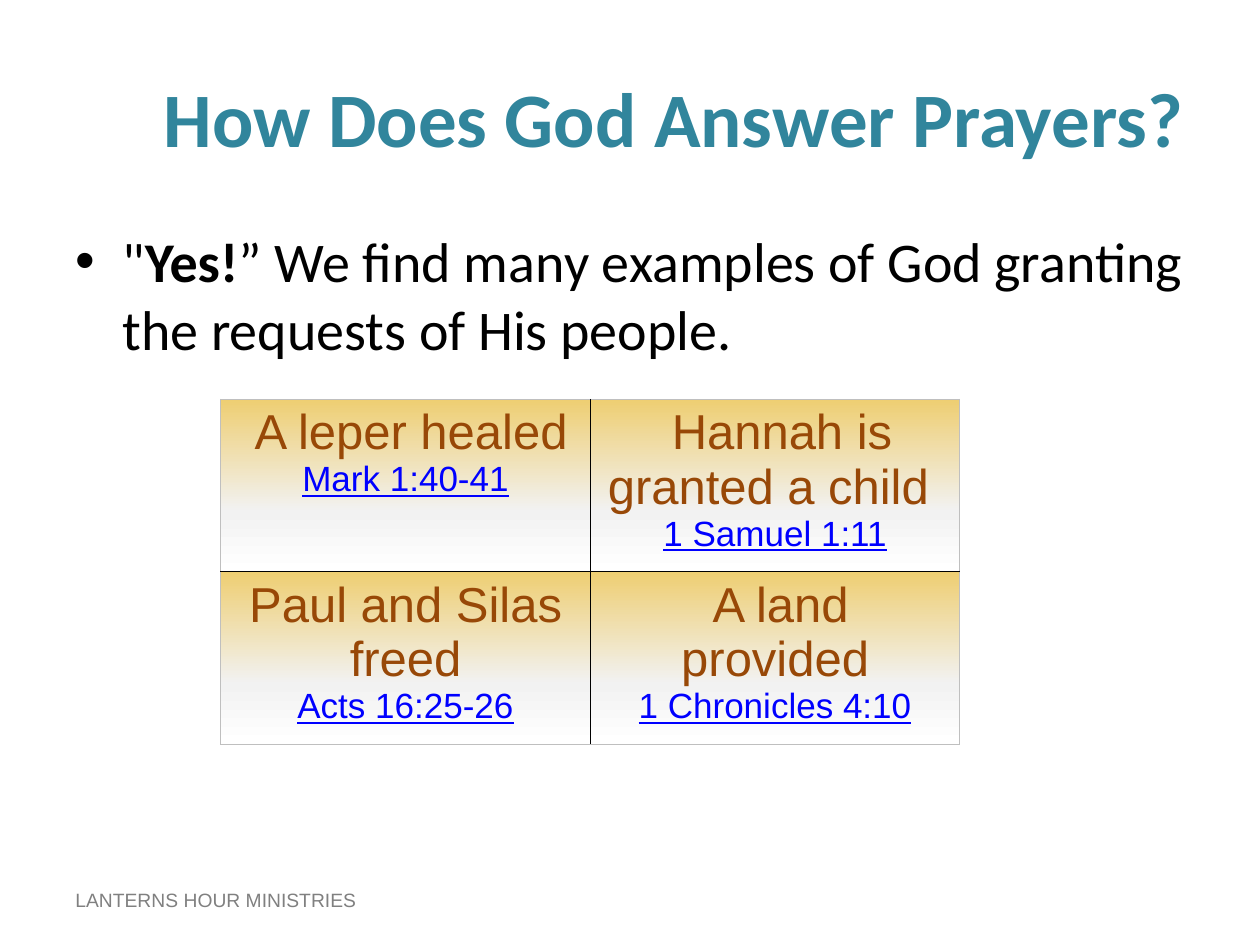
from lxml import etree
from pptx import Presentation, util as u
from pptx.dml.color import RGBColor
from pptx.enum import text
from pptx.oxml import ns

ALIGN = text.PP_ALIGN
LEFT, WIDE = 1.27, 22.86
STOPS = [(0, "EECE72"), (65, "F2F2F2"), (100, "FFFFFF")]
CELLS = [
    [(" A leper healed", "Mark 1:40-41"),
     (" Hannah is granted a child ", "1 Samuel 1:11")],
    [("Paul and Silas freed", "Acts 16:25-26"),
     (" A land provided", "1 Chronicles 4:10")],
]


def tint(code):
    return RGBColor.from_string(code)


def node(root, tag, **attrs):
    return etree.SubElement(root, ns.qn("a:" + tag), attrs)


def write(para, words, size=28, face="Arial", color="000000",
          bold=False, under=False, align=None):
    """Add one formatted run to a paragraph."""
    if align is not None:
        para.alignment = align
    run = para.add_run()
    run.text = words
    font = run.font
    font.size, font.name = u.Pt(size), face
    font.bold, font.underline = bold, under
    font.color.rgb = tint(color)


def edge(props, tag, color, width):
    line = node(props, tag, w=str(u.Pt(width)))
    node(node(line, "solidFill"), "srgbClr", val=color)


def blend(props, stops):
    """Fill a cell with a gradient that runs from top to bottom."""
    grad = node(props, "gradFill", rotWithShape="1")
    group = node(grad, "gsLst")
    for spot, color in stops:
        node(node(group, "gs", pos=str(spot * 1000)), "srgbClr", val=color)
    node(grad, "lin", ang="5400000", scaled="0")


class Deck:
    def __init__(self):
        self.file = Presentation()
        self.file.slide_width, self.file.slide_height = u.Cm(25.4), u.Cm(19.05)
        self.slide = self.file.slides.add_slide(self.file.slide_layouts[5])

    def title(self, words, x, y, w, h):
        shape = self.slide.shapes.title
        shape.left, shape.top, shape.width, shape.height = map(u.Cm, (x, y, w, h))
        shape.text_frame.vertical_anchor = text.MSO_ANCHOR.MIDDLE
        write(shape.text_frame.paragraphs[0], words, 44, "Calibri", "31859C",
              bold=True, align=ALIGN.RIGHT)

    def box(self, x, y, w, h):
        """Add a text box and return its first paragraph."""
        frame = self.slide.shapes.add_textbox(*map(u.Cm, (x, y, w, h))).text_frame
        frame.word_wrap = True
        return frame.paragraphs[0]

    def bullet(self, runs, x, y, w, h):
        para = self.box(x, y, w, h)
        props = para._p.get_or_add_pPr()
        props.set("marL", str(u.Cm(0.95)))
        props.set("indent", str(u.Cm(-0.95)))
        node(props, "buFont", typeface="Arial")
        node(props, "buChar", char="•")
        for words, bold in runs:
            write(para, words, 32, "Calibri", bold=bold)

    def table(self, cells, x, y, width, heights):
        rows, cols = len(cells), len(cells[0])
        table = self.slide.shapes.add_table(
            rows, cols, u.Cm(x), u.Cm(y),
            u.Cm(width * cols), u.Cm(sum(heights))).table
        table.first_row = table.horz_banding = False
        for col in table.columns:
            col.width = u.Cm(width)
        for r, (row, high) in enumerate(zip(cells, heights)):
            table.rows[r].height = u.Cm(high)
            for c, (event, verse) in enumerate(row):
                cell = table.cell(r, c)
                frame = cell.text_frame
                write(frame.paragraphs[0], event, color="984807",
                      align=ALIGN.CENTER)
                write(frame.add_paragraph(), verse, 20, color="0000FF",
                      under=True, align=ALIGN.CENTER)
                props = cell._tc.get_or_add_tcPr()
                outer = {"lnL": c == 0, "lnR": c == cols - 1,
                         "lnT": r == 0, "lnB": r == rows - 1}
                for tag, rim in outer.items():
                    edge(props, tag, *(("BFBFBF", 0.5) if rim else ("000000", 1)))
                blend(props, STOPS)


def main():
    deck = Deck()
    write(deck.box(LEFT, 17.78, 7, 0.74), "LANTERNS HOUR MINISTRIES", 11,
          color="808080")
    deck.title("How Does God Answer Prayers?", LEFT, 0.76, WIDE, 3.18)
    deck.bullet([('"', False), ("Yes!", True),
                 ("” We find many examples of God granting "
                  "the requests of His people.", False)],
                LEFT, 4.45, WIDE, 3.38)
    deck.table(CELLS, 4.45, 8.05, 7.45, [3.45, 3.23])
    deck.file.save("out.pptx")


if __name__ == "__main__":
    main()
